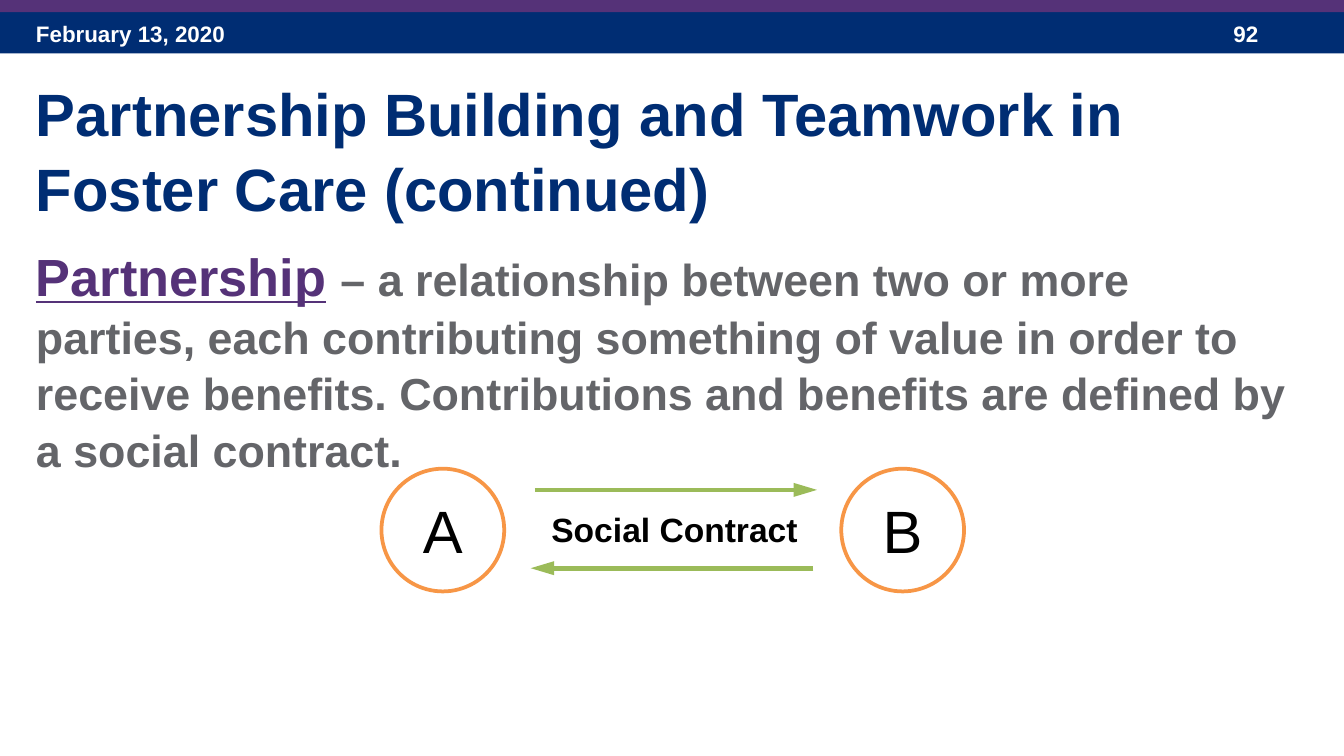
from lxml import etree
from pptx import Presentation
from pptx.dml.color import RGBColor
from pptx.enum.shapes import MSO_CONNECTOR as Connector, MSO_SHAPE as Shape
from pptx.enum.text import MSO_ANCHOR as Anchor, PP_ALIGN as Align
from pptx.oxml.ns import qn
from pptx.util import Cm, Pt

NAVY, PURPLE, GRAY = "002D73", "553278", "646569"
ORANGE, GREEN, WHITE, BLACK = "F79646", "9BBB59", "FFFFFF", "000000"
SLIDE_WIDTH, SLIDE_HEIGHT = 25.4, 14.29
TEXT_LEFT, TEXT_WIDTH = 0.43, 24.15
CIRCLE_SIZE = 2.32

HEADER = {"size": Pt(12), "bold": True}
TITLE = {"size": Pt(32), "bold": True}
TERM = {"size": Pt(28), "bold": True, "underline": True}
TERM_GAP = {"size": Pt(28), "bold": True}
DEFINITION = {"size": Pt(24), "bold": True}
PARTY = {"size": Pt(32)}
CONTRACT = {"size": Pt(18), "bold": True}


def rgb(color):
    return RGBColor.from_string(color)


def box(left, top, width, height):
    return [Cm(value) for value in (left, top, width, height)]


def write(frame, runs, align=Align.LEFT, line_spacing=1.0):
    """Fill the first paragraph with (text, colour, format) runs."""
    frame.word_wrap = True
    paragraph = frame.paragraphs[0]
    paragraph.alignment = align
    paragraph.line_spacing = line_spacing
    for text, color, style in runs:
        run = paragraph.add_run()
        run.text = text
        run.font.name = "Arial"
        run.font.color.rgb = rgb(color)
        for attribute, value in style.items():
            setattr(run.font, attribute, value)


def add_text(slide, place, runs, **layout):
    write(slide.shapes.add_textbox(*box(*place)).text_frame, runs, **layout)


def add_filled(slide, kind, place, color):
    shape = slide.shapes.add_shape(kind, *box(*place))
    shape.shadow.inherit = False
    shape.fill.solid()
    shape.fill.fore_color.rgb = rgb(color)
    shape.line.fill.background()
    return shape


def add_party(slide, left, letter):
    circle = add_filled(slide, Shape.OVAL, (left, 8.86, CIRCLE_SIZE, CIRCLE_SIZE), WHITE)
    circle.line.color.rgb = rgb(ORANGE)
    circle.line.width = Pt(2)
    circle.text_frame.vertical_anchor = Anchor.MIDDLE
    write(circle.text_frame, [(letter, BLACK, PARTY)], align=Align.CENTER)


def add_arrow(slide, start, end, y):
    arrow = slide.shapes.add_connector(Connector.STRAIGHT, Cm(start), Cm(y), Cm(end), Cm(y))
    arrow.line.color.rgb = rgb(GREEN)
    arrow.line.width = Pt(2.5)
    line = arrow.line._get_or_add_ln()
    etree.SubElement(line, qn("a:tailEnd"), type="triangle", w="med", len="lg")
    etree.SubElement(arrow._element.spPr, qn("a:effectLst"))


def add_header(slide):
    add_filled(slide, Shape.RECTANGLE, (0, 0.18, SLIDE_WIDTH, 0.83), NAVY)
    add_filled(slide, Shape.RECTANGLE, (0, 0, SLIDE_WIDTH, 0.23), PURPLE)
    add_text(slide, (TEXT_LEFT, 0.25, 5.92, 0.76), [("February 13, 2020", WHITE, HEADER)])
    add_text(slide, (23.06, 0.25, 1.9, 0.76), [("92", WHITE, HEADER)])


def add_exchange(slide):
    """Two parties joined by a social contract that runs both ways."""
    for left, letter in ((7.21, "A"), (15.9, "B")):
        add_party(slide, left, letter)
    add_text(slide, (10.11, 9.5, 5.28, 1.02), [("Social Contract", BLACK, CONTRACT)],
             align=Align.CENTER)
    add_arrow(slide, 10.11, 15.44, 9.26)
    add_arrow(slide, 15.37, 10.03, 10.74)


def main():
    deck = Presentation()
    deck.slide_width, deck.slide_height = Cm(SLIDE_WIDTH), Cm(SLIDE_HEIGHT)
    slide = deck.slides.add_slide(deck.slide_layouts[6])
    add_header(slide)
    add_text(slide, (TEXT_LEFT, 1.26, TEXT_WIDTH, 2.97),
             [("Partnership Building and Teamwork in Foster Care (continued)", NAVY, TITLE)],
             line_spacing=1.05)
    add_text(slide, (TEXT_LEFT, 4.43, TEXT_WIDTH, 8.25), [
        ("Partnership", PURPLE, TERM),
        (" ", PURPLE, TERM_GAP),
        ("– a relationship between two or more parties, each contributing something of "
         "value in order to receive benefits. Contributions and benefits are defined by "
         "a social contract.", GRAY, DEFINITION),
    ], line_spacing=1.05)
    add_exchange(slide)
    deck.save("out.pptx")


if __name__ == "__main__":
    main()
